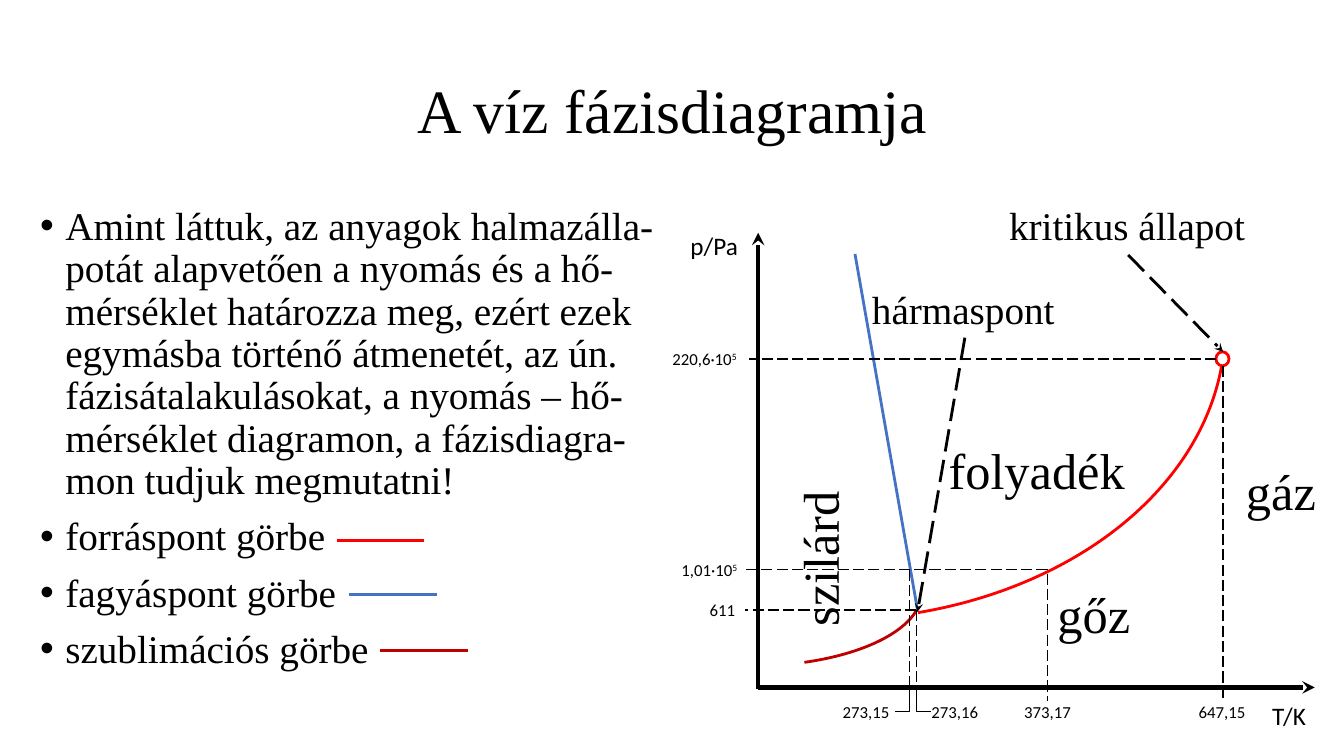
from dataclasses import dataclass
from lxml import etree
from pptx import Presentation, util as u
from pptx.dml.color import RGBColor
from pptx.enum import dml, shapes, text
from pptx.oxml.ns import qn

# Content
TITLE = "A víz fázisdiagramja"
INTRO = ("Amint láttuk, az anyagok halmazálla-potát alapvetően a nyomás és a hő-mérséklet "
         "határozza meg, ezért ezek egymásba történő átmenetét, az ún. fázisátalakulásokat, "
         "a nyomás – hő-mérséklet diagramon, a fázisdiagra-mon tudjuk megmutatni!")


@dataclass(frozen=True)
class Theme:
    serif: str = "Times New Roman"
    sans: str = "Calibri"
    ink: str = "000000"
    boiling: str = "FF0000"
    freezing: str = "4472C4"
    sublimation: str = "C00000"
    title: int = 44
    phase: int = 36
    body: int = 28
    axis: int = 18
    tick: int = 12


T = Theme()
# Curve name, colour, left column and row of its key line
CURVES = [("forráspont görbe", T.boiling, 33.4, 53.6),
          ("fagyáspont görbe", T.freezing, 34.6, 59),
          ("szublimációs görbe", T.sublimation, 37.7, 64.5)]
KEY_LENGTH = 8.7

# Diagram places, in grid columns and rows of a tenth of an inch
AXIS_X, AXIS_Y = 75.2, 68.2
TRIPLE_X, TRIPLE_Y = 90.9, 60.5
CRITICAL_X, CRITICAL_Y = 121.3, 35.6
MELTING_X, BOILING_X, NORMAL_Y = 90.2, 103.9, 56.5
TICK_ROW, TICK_WIDTH, TICK_HEIGHT = 69.1, 6.7, 3
# Temperature, column, top and bottom of the guide, left of the label
TEMPERATURES = [("273,15", MELTING_X, NORMAL_Y, 69.1, 82.6),
                ("273,16", TRIPLE_X, TRIPLE_Y, 69.5, 91.4),
                ("373,17", BOILING_X, 56.9, 69.5, 100.6),
                ("647,15", CRITICAL_X, 36.3, 69.5, 117.9)]
# Pressure, exponent, row, right and left of the guide, left and width of the label
PRESSURES = [("611", "", TRIPLE_Y, TRIPLE_X, 73.9, 69.4, 4.6),
             ("1,01·10", "5", NORMAL_Y, BOILING_X, 73.9, 66.6, 7.7),
             ("220,6·10", "5", CRITICAL_Y, 120.6, 74.3, 65.7, 8.6)]
# Elbow leaders joining the two crowded temperatures to their guides
LEADERS = [(MELTING_X, 68, 88.8), (TRIPLE_X, 68.2, 92.3)]
LEADER_ROW = 70.6
AXES = [("p/Pa", (67.5, 22.4, 6.8, 4), (AXIS_X, 68.4, AXIS_X, 23.1)),
        ("T/K", (125.2, 69, 5.4, 4), (AXIS_X, AXIS_Y, 130.4, AXIS_Y))]
PHASES = [("gőz", (103.9, 57.4, 9.3, 7.1), 0),
          ("folyadék", (93.1, 43.1, 19.7, 7.1), 0),
          ("szilárd", (73.5, 51.8, 15.5, 7.1), 270),
          ("gáz", (122.6, 45.2, 9, 7.1), 0)]
POINTERS = [("hármaspont", (85.5, 27.8, 20.3, 5.7), (95.7, 33.5, 91, 60.7)),
            ("kritikus állapot", (99.1, 19.5, 25.7, 5.7), (111.9, 25.3, CRITICAL_X, 34.9))]
# Arc frame, start and end adjustment, colour
ARCS = [((57.3, 51.5, 34.1, 14.6), (3.48, 31.12), T.sublimation),
        ((43.3, 3.5, 78.2, 58), (3.4, 43.79), T.boiling)]

# Slide
deck = Presentation()
deck.slide_width, deck.slide_height = u.Inches(13.33), u.Inches(7.5)
slide = deck.slides.add_slide(deck.slide_layouts[6])
parts = slide.shapes


def grid(*cells):
    return [u.Inches(cell / 10) for cell in cells]


def stroke(shape, color, width, dashed=False, arrow=False):
    shape.line.color.rgb = RGBColor.from_string(color)
    shape.line.width = u.Pt(width)
    if dashed:
        shape.line.dash_style = dml.MSO_LINE.LONG_DASH
    if arrow:
        etree.SubElement(shape.get_or_add_ln(), qn("a:tailEnd"), type="stealth")


def draw_line(ends, color=T.ink, width=1, **style):
    link = parts.add_connector(shapes.MSO_CONNECTOR.STRAIGHT, *grid(*ends))
    stroke(link, color, width, **style)
    etree.SubElement(link.element.spPr, qn("a:effectLst"))


def outline(shape, color, width):
    shape.shadow.inherit = False
    shape.fill.background()
    stroke(shape, color, width)


def write(content, place, size=T.tick, font=T.sans, wrap=False, bullets=False, raised="",
          align=text.PP_ALIGN.LEFT, anchor=text.MSO_ANCHOR.TOP, spacing=1.0, turn=0):
    box = parts.add_textbox(*grid(*place))
    box.rotation = turn
    frame = box.text_frame
    frame.word_wrap = wrap
    frame.vertical_anchor = anchor
    for i, words in enumerate([content] if isinstance(content, str) else content):
        para = frame.paragraphs[0] if i == 0 else frame.add_paragraph()
        para.alignment, para.line_spacing = align, spacing
        if bullets:
            para.space_before = u.Pt(10)
            props = para._p.get_or_add_pPr()
            props.set("marL", str(u.Inches(0.25)))
            props.set("indent", str(u.Inches(-0.25)))
            etree.SubElement(props, qn("a:buFont"), typeface="Arial")
            etree.SubElement(props, qn("a:buChar"), char="•")
        for piece in filter(None, (words, raised)):
            run = para.add_run()
            run.text = piece
            run.font.size, run.font.name = u.Pt(size), font
            run.font.color.rgb = RGBColor.from_string(T.ink)
            if piece == raised:
                run._r.get_or_add_rPr().set("baseline", "30000")


# Title and explanation
write(TITLE, (9.2, 4, 115, 14.5), size=T.title, font=T.serif, wrap=True, spacing=0.9,
      align=text.PP_ALIGN.CENTER, anchor=text.MSO_ANCHOR.MIDDLE)
write([INTRO] + [name for name, *_ in CURVES], (3, 20, 63.7, 48.4), size=T.body,
      font=T.serif, wrap=True, bullets=True, spacing=0.9)
for _, color, left, row in CURVES:
    draw_line((left, row, left + KEY_LENGTH, row), color, 2)

# Phase boundaries and critical point
for place, bends, color in ARCS:
    boundary = parts.add_shape(shapes.MSO_SHAPE.ARC, *grid(*place))
    boundary.adjustments[0], boundary.adjustments[1] = bends
    outline(boundary, color, 2)
draw_line((84.8, 25.2, 91, TRIPLE_Y), T.freezing, 2)
critical = parts.add_shape(shapes.MSO_SHAPE.OVAL, *grid(120.6, 34.9, 1.3, 1.4))
outline(critical, T.boiling, 2)

# Temperature and pressure guides
for label, column, top, bottom, left in TEMPERATURES:
    draw_line((column, top, column, bottom), dashed=True)
    write(label, (left, TICK_ROW, TICK_WIDTH, TICK_HEIGHT))
for column, top, end in LEADERS:
    leader = parts.build_freeform(*grid(column, top))
    leader.add_line_segments([grid(column, LEADER_ROW), grid(end, LEADER_ROW)], close=False)
    outline(leader.convert_to_shape(), T.ink, 1)
for label, power, row, right, left, label_left, width in PRESSURES:
    draw_line((right, row, left, row), dashed=True)
    write(label, (label_left, row - TICK_HEIGHT / 2, width, TICK_HEIGHT), raised=power)

# Axes, phases and pointers
for label, place, ends in AXES:
    draw_line(ends, width=3, arrow=True)
    write(label, place, size=T.axis)
for label, place, turn in PHASES:
    write(label, place, size=T.phase, font=T.serif, turn=turn)
for label, place, ends in POINTERS:
    write(label, place, size=T.body, font=T.serif)
    draw_line(ends, width=2, dashed=True, arrow=True)

deck.save("out.pptx")
